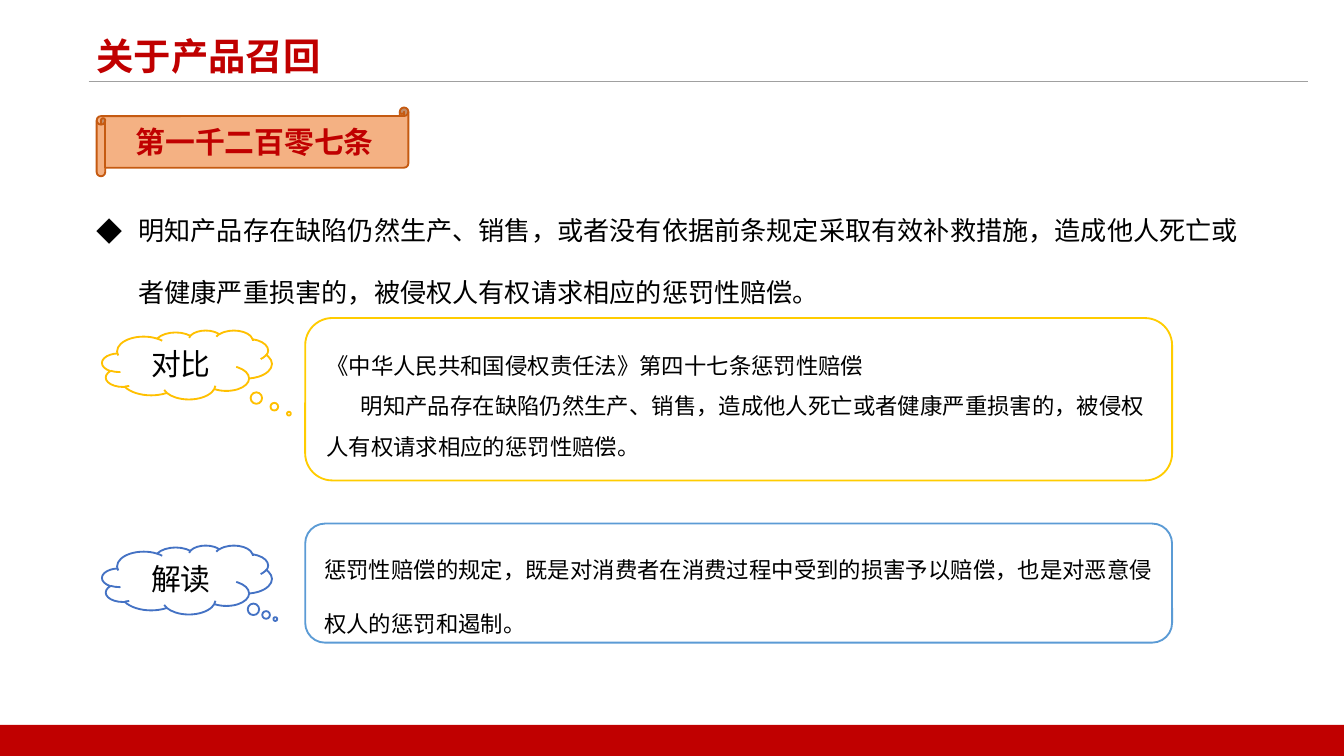
from lxml import etree
from pptx import Presentation
from pptx.dml.color import RGBColor
from pptx.enum.shapes import MSO_CONNECTOR, MSO_SHAPE
from pptx.enum.text import MSO_ANCHOR, PP_ALIGN
from pptx.oxml.ns import qn
from pptx.util import Pt

LINE = MSO_CONNECTOR.STRAIGHT
RECT, ROUND = MSO_SHAPE.RECTANGLE, MSO_SHAPE.ROUNDED_RECTANGLE
SCROLL, CLOUD = MSO_SHAPE.HORIZONTAL_SCROLL, MSO_SHAPE.CLOUD_CALLOUT
MIDDLE, LEFT, CENTER = MSO_ANCHOR.MIDDLE, PP_ALIGN.LEFT, PP_ALIGN.CENTER
FONT = "Noto Sans CJK SC"
RED, BLACK = "C00000", "000000"


def add_box(kind, left, top, width, height, fill=None, line=None):
    """Add a preset shape, or a text box when kind is None."""
    area = [Pt(n) for n in (left, top, width, height)]
    if kind is None:
        return slide.shapes.add_textbox(*area)
    box = slide.shapes.add_shape(kind, *area)
    box.shadow.inherit = False
    box.fill.background()
    box.line.fill.background()
    if fill:
        box.fill.solid()
        box.fill.fore_color.rgb = RGBColor.from_string(fill)
    if line:
        box.line.color.rgb = RGBColor.from_string(line)
        box.line.width = Pt(1)
    box.text_frame.vertical_anchor = MIDDLE
    return box


def write(box, text, size, color=BLACK, bold=False, align=LEFT, space=None):
    frame = box.text_frame
    frame.word_wrap = True
    frame.text = text
    for para in frame.paragraphs:
        para.alignment = align
        para.line_spacing = space
        for run in para.runs:
            font = run.font
            font.name, font.size, font.bold = FONT, Pt(size), bold
            font.color.rgb = RGBColor.from_string(color)
            # East Asian glyphs take their font from a:ea
            east = etree.SubElement(run._r.get_or_add_rPr(), qn("a:ea"))
            east.set("typeface", FONT)


deck = Presentation()
deck.slide_width, deck.slide_height = Pt(720), Pt(405)
slide = deck.slides.add_slide(deck.slide_layouts[6])

# Title, rule and footer band
rule = slide.shapes.add_connector(LINE, Pt(47.5), Pt(43.7), Pt(700.5), Pt(43.7))
rule.line.color.rgb = RGBColor.from_string("A0A0A0")
rule.line.width = Pt(0.5)
etree.SubElement(rule._element.spPr, qn("a:effectLst"))
title = add_box(None, 44.6, 14.4, 150, 36.7)
write(title, "关于产品召回", 20, RED, True)
add_box(RECT, 0, 388.3, 720, 16.7, RED)

# Article number and text
scroll = add_box(SCROLL, 51.8, 57.6, 167, 36.9, "F4B183", "C55A11")
write(scroll, "第一千二百零七条", 16, RED, True, CENTER)
clause = add_box(None, 44.6, 94.3, 630.7, 69)
write(clause, "明知产品存在缺陷仍然生产、销售，或者没有依据前条规定采取有效补救措施，"
      "造成他人死亡或者健康严重损害的，被侵权人有权请求相应的惩罚性赔偿。", 14, space=2)
props = clause.text_frame.paragraphs[0]._p.get_or_add_pPr()
props.set("marL", str(Pt(22.5)))
props.set("indent", str(-Pt(22.5)))
etree.SubElement(props, qn("a:buFont")).set("typeface", FONT)
etree.SubElement(props, qn("a:buChar")).set("char", "◆")

# Clouds, each with its note
law = ("《中华人民共和国侵权责任法》第四十七条惩罚性赔偿\n"
       "明知产品存在缺陷仍然生产、销售，造成他人死亡或者健康严重损害的，"
       "被侵权人有权请求相应的惩罚性赔偿。")
view = ("惩罚性赔偿的规定，既是对消费者在消费过程中受到的损害予以赔偿，"
        "也是对恶意侵权人的惩罚和遏制。")
rows = [
    ("对比", 177, "FFC000", (0.6, 0.71), law, 170.4, 87, "FFCC00", 1.5),
    ("解读", 292.2, "4472C4", (0.52, 0.57), view, 280.5, 63.8, "5B9BD5", 2),
]
for label, top, edge, tail, text, y, high, frame, space in rows:
    cloud = add_box(CLOUD, 54.7, top, 91, 36.9, "FFFFFF", edge)
    cloud.adjustments[0], cloud.adjustments[1] = tail
    write(cloud, label, 16, align=CENTER)
    note = add_box(ROUND, 163.5, y, 464.4, high, line=frame)
    write(note, text, 12, space=space)
    for para in note.text_frame.paragraphs[1:]:
        para._p.get_or_add_pPr().set("indent", str(Pt(18.5)))

deck.save("out.pptx")
